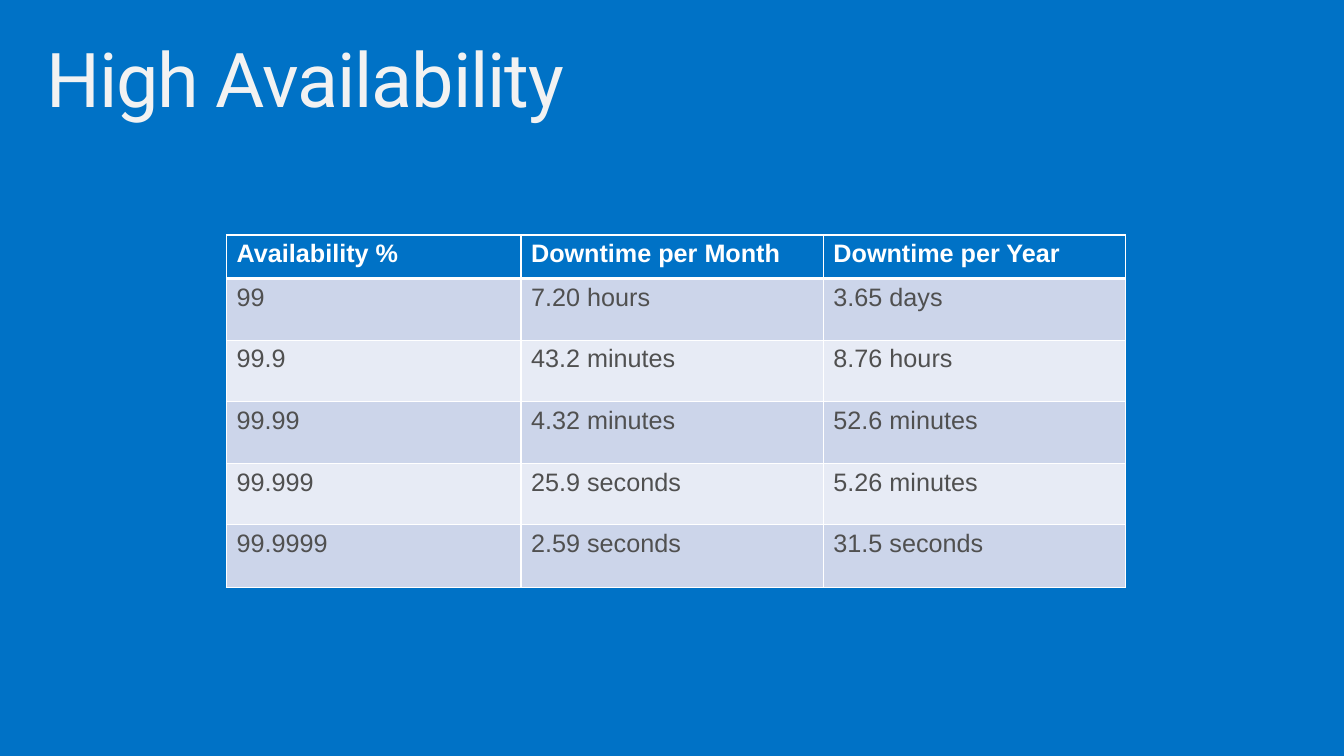
from lxml.etree import SubElement as Sub
from pptx import Presentation
from pptx.dml.color import RGBColor as Color
from pptx.enum.text import MSO_ANCHOR as Anchor, PP_ALIGN as Align
from pptx.oxml.ns import qn
from pptx.util import Cm, Pt

BLUE = "0072C6"
WHITE = "FFFFFF"
BANDS = ("CCD5EA", "E7EBF5")
WIDTHS = (7.42, 7.62, 7.62)
HEIGHTS = (1.1, 1.55, 1.55, 1.55, 1.55, 1.59)
ROWS = (
    ("Availability %", "Downtime per Month", "Downtime per Year"),
    ("99", "7.20 hours", "3.65 days"),
    ("99.9", "43.2 minutes", "8.76 hours"),
    ("99.99", "4.32 minutes", "52.6 minutes"),
    ("99.999", "25.9 seconds", "5.26 minutes"),
    ("99.9999", "2.59 seconds", "31.5 seconds"),
)


def paint(fill, tone):
    fill.solid()
    fill.fore_color.rgb = Color.from_string(tone)


def write(frame, text, size=18, face="Arial", tone="505050", bold=False, lead=1.0):
    para = frame.paragraphs[0]
    para.alignment = Align.LEFT
    para.line_spacing = lead
    run = para.add_run()
    run.text = text
    font = run.font
    font.size, font.name, font.bold = Pt(size), face, bold
    paint(font.fill, tone)
    return run


def edge(cell, side, width):
    line = Sub(cell._tc.get_or_add_tcPr(), qn("a:ln" + side), w=str(Pt(width)))
    fill = Sub(line, qn("a:solidFill"))
    Sub(fill, qn("a:srgbClr"), val=WHITE)


def add_title(slide, text):
    title = slide.shapes.title
    title.left, title.top = Cm(0.76), Cm(0.81)
    title.width, title.height = Cm(32.39), Cm(2.49)
    frame = title.text_frame
    frame.word_wrap = True
    frame.vertical_anchor = Anchor.TOP
    frame.margin_left = frame.margin_right = Cm(0.41)
    frame.margin_top = frame.margin_bottom = Cm(0.25)
    run = write(frame, text, size=54, face="Roboto", tone="F2F2F2", lead=0.9)
    run.font._element.set("spc", "-80")


def fill_cell(cell, text, row):
    head = row == 0
    write(cell.text_frame, text, tone=WHITE if head else "505050", bold=head)
    for side in "LRTB":
        thick = (row, side) in ((0, "B"), (1, "T"))
        edge(cell, side, 3 if thick else 1)
    paint(cell.fill, BLUE if head else BANDS[(row - 1) % 2])


def add_grid(slide):
    grid = slide.shapes.add_table(
        len(ROWS), len(WIDTHS), Cm(5.71), Cm(5.92), Cm(sum(WIDTHS)), Cm(sum(HEIGHTS))
    ).table
    for col, width in zip(grid.columns, WIDTHS):
        col.width = Cm(width)
    for row, (height, texts) in enumerate(zip(HEIGHTS, ROWS)):
        grid.rows[row].height = Cm(height)
        for col, text in enumerate(texts):
            fill_cell(grid.cell(row, col), text, row)


def main():
    deck = Presentation()
    deck.slide_width, deck.slide_height = Cm(33.87), Cm(19.05)
    slide = deck.slides.add_slide(deck.slide_layouts[5])
    paint(slide.background.fill, BLUE)
    add_title(slide, "High Availability")
    add_grid(slide)
    deck.save("out.pptx")


if __name__ == "__main__":
    main()
